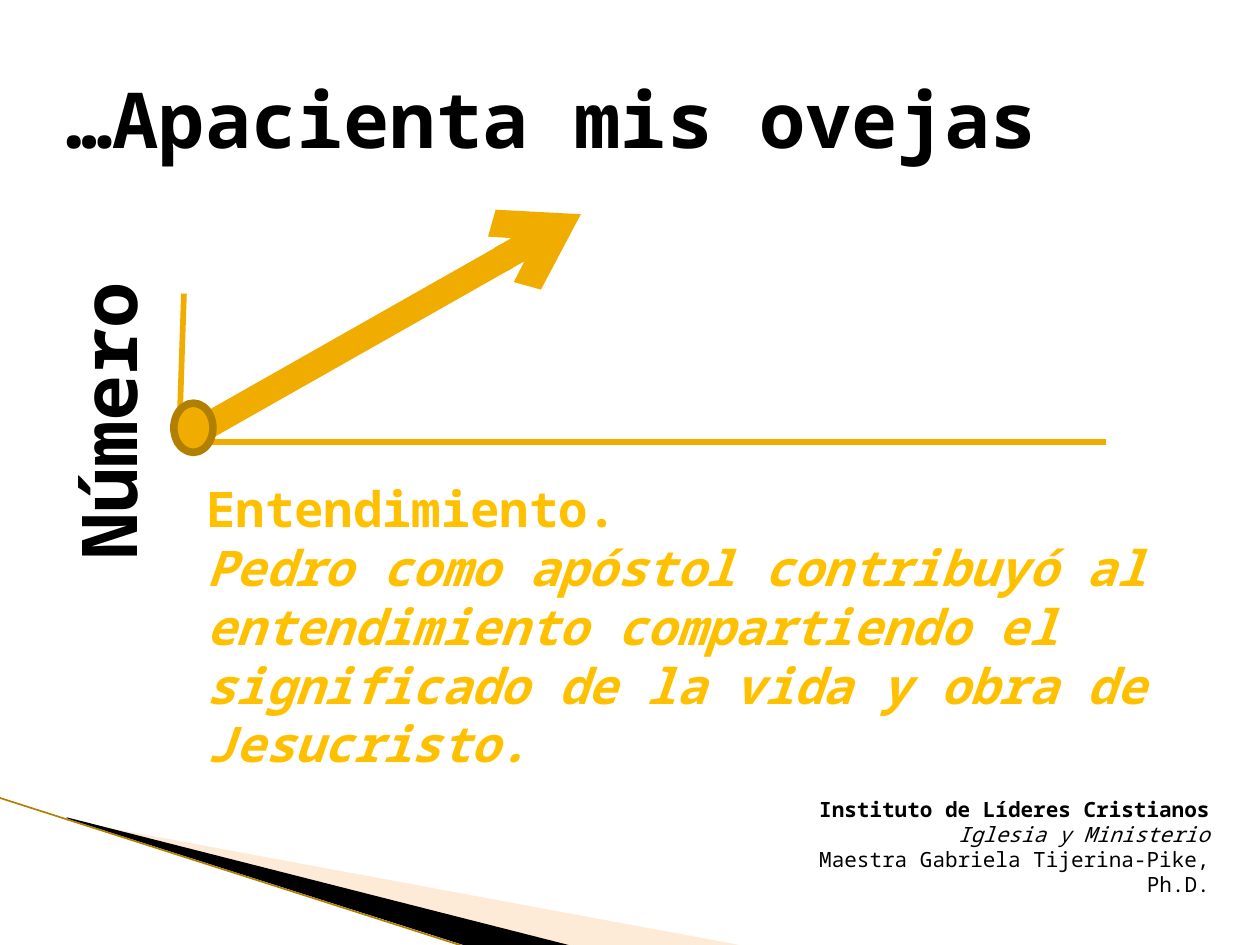
from lxml import etree
from pptx import Presentation
from pptx.dml.color import RGBColor
from pptx.enum.shapes import MSO_CONNECTOR, MSO_SHAPE
from pptx.enum.text import PP_ALIGN
from pptx.oxml.ns import qn
from pptx.util import Pt

LEFT, RIGHT = PP_ALIGN.LEFT, PP_ALIGN.RIGHT
STRAIGHT, OVAL = MSO_CONNECTOR.STRAIGHT, MSO_SHAPE.OVAL
BLACK = RGBColor(0x00, 0x00, 0x00)
CREAM = RGBColor(0xFC, 0xCF, 0x9B)
GOLD = RGBColor(0xF0, 0xAD, 0x00)
BRONZE = RGBColor(0xB2, 0x80, 0x00)
AMBER = RGBColor(0xFF, 0xC0, 0x00)
FONT = "Noto Sans Mono"

deck = Presentation()
deck.slide_width, deck.slide_height = Pt(720), Pt(540)
slide = deck.slides.add_slide(deck.slide_layouts[6])
shapes = slide.shapes


def add_text(lines, box, size, color=BLACK, align=LEFT, turn=0):
    """Add a text box; each line is (text, bold, italic)."""
    shape = shapes.add_textbox(*map(Pt, box))
    shape.rotation = turn
    frame = shape.text_frame
    frame.word_wrap = True
    for i, (text, bold, italic) in enumerate(lines):
        para = frame.paragraphs[0] if i == 0 else frame.add_paragraph()
        para.alignment = align
        run = para.add_run()
        run.text = text
        font = run.font
        font.name, font.size = FONT, Pt(size)
        font.bold, font.italic = bold, italic
        font.color.rgb = color


def add_line(ends, width, color):
    line = shapes.add_connector(STRAIGHT, *map(Pt, ends))
    line.line.width = Pt(width)
    line.line.color.rgb = color
    etree.SubElement(line._element.spPr, qn("a:effectLst"))
    return line


# Corner sweep
sweeps = [
    (CREAM, [(39.6, 468.72), (428.4, 540.72), (328.32, 540.72), (39.6, 468)]),
    (BLACK, [(38.16, 467.28), (329.04, 540.72), (267.84, 541.44), (38.88, 468)]),
]
for color, points in sweeps:
    pen = shapes.build_freeform(*points[0], scale=Pt(1))
    pen.add_line_segments(points[1:], close=True)
    sweep = pen.convert_to_shape()
    sweep.shadow.inherit = False
    sweep.fill.solid()
    sweep.fill.fore_color.rgb = color
    sweep.line.fill.background()
    if color == CREAM:
        tint = sweep._element.spPr.find(".//" + qn("a:srgbClr"))
        etree.SubElement(tint, qn("a:alpha"), val="40000")
add_line((-0.72, 455.76, 267.12, 541.44), 0.95, BRONZE)

add_text([("Instituto de Líderes Cristianos", True, False),
          ("Iglesia y Ministerio", False, True),
          ("Maestra Gabriela Tijerina-Pike, Ph.D.", False, False)],
         (427.68, 451.44, 270.72, 51.12), 12, align=RIGHT)
add_text([("…Apacienta mis ovejas", True, False)],
         (30.96, 37.44, 635.04, 60.48), 44)

# Axes and their labels
add_line((105.12, 167.76, 102.24, 254.16), 3.25, GOLD)
add_line((632.16, 252.72, 99.36, 252.72), 3.25, GOLD)
add_text([("Número", True, False)],
         (-35.28, 200.16, 192.96, 60.48), 44, turn=270)
add_text([("Entendimiento.", True, False),
          ("Pedro como apóstol contribuyó al entendimiento compartiendo "
           "el significado de la vida y obra de Jesucristo.", True, True)],
         (110.88, 270, 583.92, 177.12), 28, color=AMBER)

# Growth arrow from the origin
arrow = add_line((110.88, 247.68, 331.92, 122.4), 15, GOLD)
etree.SubElement(arrow.line._get_or_add_ln(), qn("a:tailEnd"), type="arrow")

dot = shapes.add_shape(OVAL, *map(Pt, (99.36, 230.4, 22.32, 28.08)))
dot.shadow.inherit = False
dot.fill.solid()
dot.fill.fore_color.rgb = GOLD
dot.line.color.rgb = BRONZE
dot.line.width = Pt(4.33)

deck.save("out.pptx")
